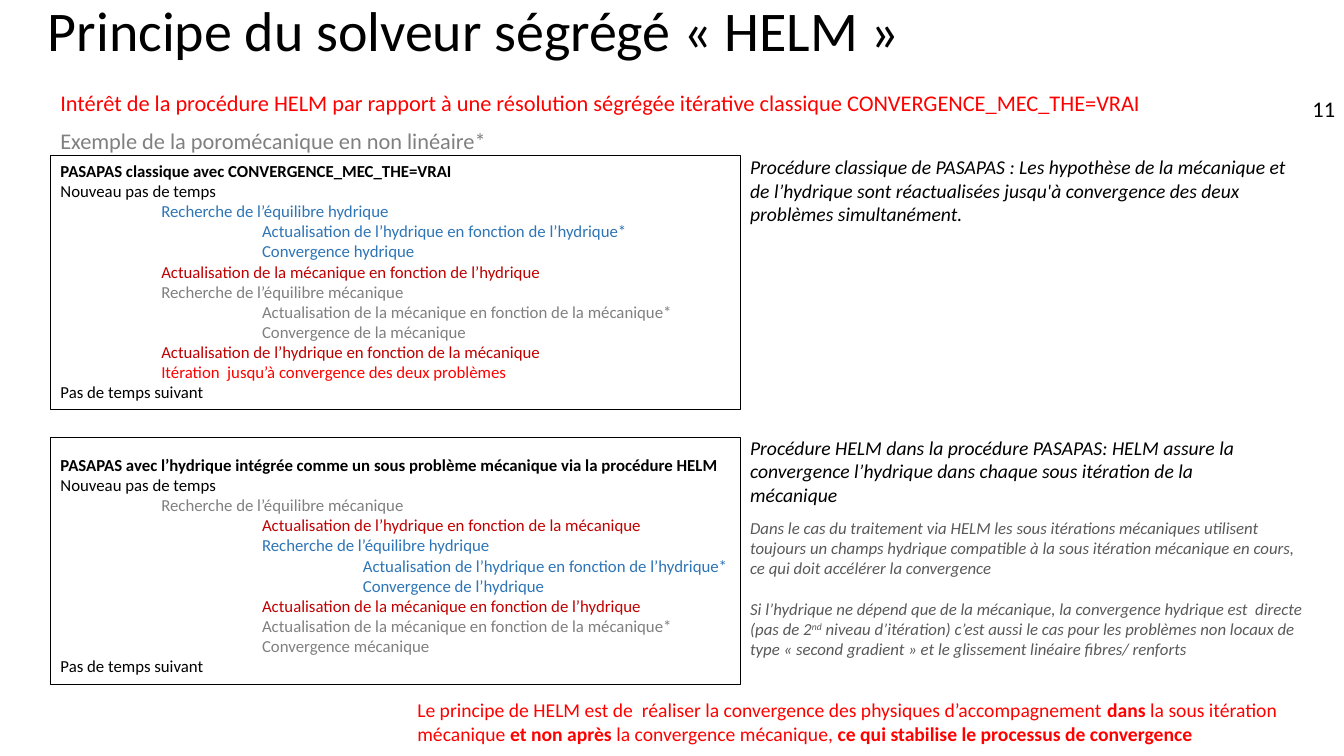
import dataclasses

import lxml.etree
import pptx
import pptx.dml.color
import pptx.enum.text
import pptx.oxml.ns
import pptx.util

SCALE = 9525


@dataclasses.dataclass(frozen=True)
class Theme:
    """Colours, font and type sizes of the slide."""
    face: str = "Calibri"
    black: str = "000000"
    red: str = "FF0000"
    cross: str = "C00000"
    water: str = "2E75B6"
    solid: str = "808080"
    muted: str = "595959"
    title: int = 40
    head: int = 16
    body: int = 14
    small: int = 12


THEME = Theme()

CLASSIC = [
    (0, THEME.black, "PASAPAS classique avec CONVERGENCE_MEC_THE=VRAI"),
    (0, THEME.black, "Nouveau pas de temps"),
    (1, THEME.water, "Recherche de l’équilibre hydrique"),
    (2, THEME.water, "Actualisation de l’hydrique en fonction de l’hydrique*"),
    (2, THEME.water, "Convergence hydrique"),
    (1, THEME.cross, "Actualisation de la mécanique en fonction de l’hydrique"),
    (1, THEME.solid, "Recherche de l’équilibre mécanique"),
    (2, THEME.solid, "Actualisation de la mécanique en fonction de la mécanique*"),
    (2, THEME.solid, "Convergence de la mécanique"),
    (1, THEME.cross, "Actualisation de l’hydrique en fonction de la mécanique"),
    (1, THEME.red, "Itération  jusqu’à convergence des deux problèmes"),
    (0, THEME.black, "Pas de temps suivant"),
]
HELM = [
    (0, THEME.black, "PASAPAS avec l’hydrique intégrée comme un sous problème "
                     "mécanique via la procédure HELM"),
    (0, THEME.black, "Nouveau pas de temps"),
    (1, THEME.solid, "Recherche de l’équilibre mécanique"),
    (2, THEME.cross, "Actualisation de l’hydrique en fonction de la mécanique"),
    (2, THEME.water, "Recherche de l’équilibre hydrique"),
    (3, THEME.water, "Actualisation de l’hydrique en fonction de l’hydrique*"),
    (3, THEME.water, "Convergence de l’hydrique"),
    (2, THEME.cross, "Actualisation de la mécanique en fonction de l’hydrique"),
    (2, THEME.solid, "Actualisation de la mécanique en fonction de la mécanique*"),
    (2, THEME.solid, "Convergence mécanique"),
    (0, THEME.black, "Pas de temps suivant"),
]


def place(shape, area):
    """Move a shape to an area given in px."""
    shape.left, shape.top, shape.width, shape.height = (v * SCALE for v in area)


def style(para, size, color, bold=False, italic=False):
    """Set the font of a whole paragraph."""
    font = para.font
    font.name = THEME.face
    font.size = pptx.util.Pt(size)
    font.bold = bold
    font.italic = italic
    font.color.rgb = pptx.dml.color.RGBColor.from_string(color)


def set_up(shape, area, anchor=pptx.enum.text.MSO_ANCHOR.TOP):
    """Place a text shape and return its wrapped frame."""
    place(shape, area)
    frame = shape.text_frame
    frame.word_wrap = True
    frame.auto_size = pptx.enum.text.MSO_AUTO_SIZE.NONE
    frame.vertical_anchor = anchor
    return frame


def add_title(slide, area, text):
    """Fill the title placeholder."""
    frame = set_up(slide.shapes.title, area, pptx.enum.text.MSO_ANCHOR.MIDDLE)
    para = frame.paragraphs[0]
    para.text = text
    para.alignment = pptx.enum.text.PP_ALIGN.LEFT
    para.line_spacing = 0.9
    style(para, THEME.title, THEME.black)


def add_steps(holder, area, steps):
    """Fill a body placeholder with indented steps under a bold heading."""
    frame = set_up(holder, area)
    for i, (depth, color, text) in enumerate(steps):
        para = frame.add_paragraph() if i else frame.paragraphs[0]
        para.text = text
        props = para._p.get_or_add_pPr()
        props.set("marL", str(depth * 96 * SCALE))
        props.set("indent", "0")
        lxml.etree.SubElement(props, pptx.oxml.ns.qn("a:buNone"))
        para.space_before = pptx.util.Pt(0)
        style(para, THEME.small, color, bold=i == 0)


def add_frame(slide, area):
    """Draw a thin black frame without fill."""
    rect = slide.shapes.add_shape(pptx.enum.shapes.MSO_SHAPE.RECTANGLE, 0, 0, 0, 0)
    place(rect, area)
    rect.shadow.inherit = False
    rect.fill.background()
    rect.line.color.rgb = pptx.dml.color.RGBColor.from_string(THEME.black)
    rect.line.width = pptx.util.Pt(1)


def add_note(slide, area, paras, size, color, italic=False, gap=0):
    """Add a text box; each paragraph is a list of (text, mark) runs."""
    frame = set_up(slide.shapes.add_textbox(0, 0, 0, 0), area)
    for i, runs in enumerate(paras):
        para = frame.add_paragraph() if i else frame.paragraphs[0]
        if i:
            para.space_before = pptx.util.Pt(gap)
        style(para, size, color, italic=italic)
        for text, mark in runs:
            run = para.add_run()
            run.text = text
            if mark == "bold":
                run.font.bold = True
            elif mark == "super":
                run._r.get_or_add_rPr().set("baseline", "30000")
    return frame


def main():
    """Build the slide and save it."""
    deck = pptx.Presentation()
    deck.slide_width, deck.slide_height = 1280 * SCALE, 720 * SCALE
    slide = deck.slides.add_slide(deck.slide_layouts.get_by_name("Two Content"))
    left, right = list(slide.placeholders)[1:3]

    add_title(slide, (36, 0, 1009, 64), "Principe du solveur ségrégé « HELM »")
    page = add_note(slide, (1205, 86, 76, 32), [[("11", "")]], THEME.head, THEME.black)
    page.paragraphs[0].alignment = pptx.enum.text.PP_ALIGN.RIGHT
    add_note(slide, (48, 80, 1063, 36), [[
        ("Intérêt de la procédure HELM par rapport à une résolution ségrégée "
         "itérative classique CONVERGENCE_MEC_THE=VRAI", "")]], THEME.head, THEME.red)
    add_note(slide, (48, 116, 430, 33), [[
        ("Exemple de la poromécanique en non linéaire*", "")]], THEME.head, THEME.solid)

    add_frame(slide, (48, 148, 657, 242))
    add_steps(left, (48, 148, 657, 242), CLASSIC)
    add_frame(slide, (48, 417, 657, 235))
    add_steps(right, (48, 428, 657, 223), HELM)

    add_note(slide, (705, 143, 536, 78), [[
        ("Procédure classique de PASAPAS : Les hypothèse de la mécanique et de "
         "l’hydrique sont réactualisées jusqu'à convergence des deux problèmes "
         "simultanément.", "")]], THEME.body, THEME.black, italic=True)
    add_note(slide, (705, 410, 528, 78), [[
        ("Procédure HELM dans la procédure PASAPAS: HELM assure la convergence "
         "l’hydrique dans chaque sous itération de la mécanique", "")]],
        THEME.body, THEME.black, italic=True)
    add_note(slide, (705, 488, 546, 145), [
        [("Dans le cas du traitement via HELM les sous itérations mécaniques "
          "utilisent toujours un champs hydrique compatible à la sous itération "
          "mécanique en cours, ce qui doit accélérer la convergence", "")],
        [("Si l’hydrique ne dépend que de la mécanique, la convergence hydrique "
          "est  directe (pas de 2", ""), ("nd", "super"),
         (" niveau d’itération) c’est aussi le cas pour les problèmes non locaux "
          "de type « second gradient » et le glissement linéaire fibres/ renforts", "")],
    ], THEME.small, THEME.muted, italic=True, gap=14.6)
    add_note(slide, (388, 660, 892, 55), [[
        ("Le principe de HELM est de  réaliser la convergence des physiques "
         "d’accompagnement ", ""), ("dans", "bold"),
        (" la sous itération mécanique ", ""), ("et non après ", "bold"),
        ("la convergence mécanique, ", ""),
        ("ce qui stabilise le processus de convergence", "bold")]],
        THEME.body, THEME.red)

    deck.save("out.pptx")


if __name__ == "__main__":
    main()
